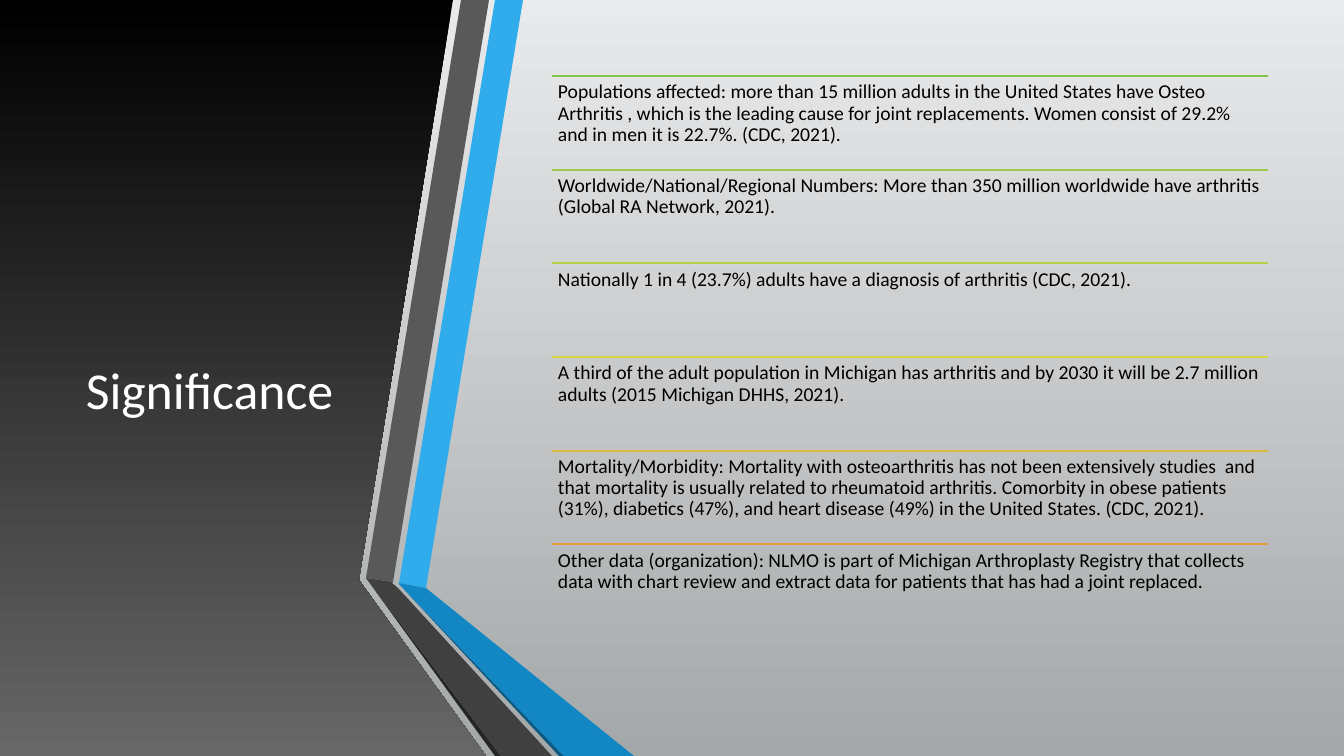
from lxml.etree import SubElement
from pptx import Presentation
from pptx.dml.color import RGBColor
from pptx.enum.shapes import MSO_CONNECTOR, MSO_SHAPE
from pptx.enum.text import MSO_ANCHOR, PP_ALIGN
from pptx.oxml.ns import qn
from pptx.util import Pt

SLIDE_WIDTH, SLIDE_HEIGHT = 1344, 756
SCALE = 12192000 / SLIDE_WIDTH  # EMU in one px

COLOURS = {
    "mist": "E9EAEB", "steel": "A5A8A9",
    "black": "000000", "ash": "676767", "white": "FFFFFF",
    "sky": "30ACEC", "ocean": "1287C3", "deep": "0C5A82",
    "grey": "595959", "charcoal": "404040", "soot": "262626",
}

# Ribbon facets as (colour, corners), relative to the ribbon's left edge
RIBBON = [
    ("sky", [(33, 583), (60, 588), (157, 0), (129, 0)]),
    ("grey", [(123, 0), (95, 0), (0, 578), (27, 582)]),
    ("soot", [(0, 578), (129, 756), (135, 756)]),
    ("deep", [(33, 584), (193, 756), (198, 756)]),
    ("ocean", [(33, 584), (198, 756), (268, 756), (60, 588), (33, 583)]),
    ("charcoal", [(186, 756), (32, 588), (26, 583), (27, 582), (0, 578), (135, 756)]),
]

# Facts as (rule colour, wording)
FACTS = [
    ("80C34F", "Populations affected: more than 15 million adults in the United States "
     "have Osteo Arthritis , which is the leading cause for joint replacements. "
     "Women consist of 29.2% and in men it is 22.7%. (CDC, 2021)."),
    ("9AC94B", "Worldwide/National/Regional Numbers: More than 350 million worldwide "
     "have arthritis (Global RA Network, 2021)."),
    ("B8D048", "Nationally 1 in 4 (23.7%) adults have a diagnosis of arthritis (CDC, 2021)."),
    ("D6D344", "A third of the adult population in Michigan has arthritis and by 2030 "
     "it will be 2.7 million adults (2015 Michigan DHHS, 2021)."),
    ("DCBA41", "Mortality/Morbidity: Mortality with osteoarthritis has not been "
     "extensively studies  and that mortality is usually related to rheumatoid "
     "arthritis. Comorbity in obese patients (31%), diabetics (47%), and heart "
     "disease (49%) in the United States. (CDC, 2021)."),
    ("E29D3E", "Other data (organization): NLMO is part of Michigan Arthroplasty Registry "
     "that collects data with chart review and extract data for patients that has "
     "had a joint replaced."),
]


def px(*lengths):
    return [round(length * SCALE) for length in lengths]


def set_all(target, values):
    for name, value in values.items():
        setattr(target, name, value)


def paint_gradient(fill, top, bottom):
    fill.gradient()
    fill.gradient_angle = 270
    for stop, colour in zip(fill.gradient_stops, (top, bottom)):
        stop.color.rgb = RGBColor.from_string(COLOURS[colour])


def add_outline(page, left, top, corners):
    """Closed shape without line or shadow; corners are relative to left, top."""
    points = [(left + x, top + y) for x, y in corners]
    builder = page.shapes.build_freeform(*points[0], scale=SCALE)
    builder.add_line_segments(points[1:], close=True)
    shape = builder.convert_to_shape()
    shape.shadow.inherit = False
    shape.line.fill.background()
    return shape


def add_text(page, box, wording, colour, size, margins, frame_format, para_format):
    frame = page.shapes.add_textbox(*px(*box)).text_frame
    sides = ("margin_left", "margin_top", "margin_right", "margin_bottom")
    set_all(frame, {"word_wrap": True, **dict(zip(sides, px(*margins))), **frame_format})
    para = frame.paragraphs[0]
    set_all(para, para_format)
    span = para.add_run()
    span.text = wording
    set_all(span.font, {"name": "Calibri", "size": Pt(size)})
    span.font.color.rgb = RGBColor.from_string(COLOURS[colour])


def add_backdrop(page, left, top, width, height):
    paint_gradient(page.background.fill, "mist", "steel")
    backdrop = page.shapes.add_shape(MSO_SHAPE.RECTANGLE, *px(left, top, width, height))
    backdrop.shadow.inherit = False
    backdrop.line.fill.background()
    paint_gradient(backdrop.fill, "mist", "steel")


def add_title_panel(page, left, top, width, height):
    corners = [(0, 0), (width - 33, 0), (width - 127, 580), (width, height), (0, height)]
    panel = add_outline(page, left, top, corners)
    paint_gradient(panel.fill, "black", "ash")
    # The deep top margin seats the title below the middle
    add_text(page, (left + 59, top + 76, 291, 562), "Significance", "white", 37,
             (15, 68, 5, 5), {"vertical_anchor": MSO_ANCHOR.MIDDLE},
             {"alignment": PP_ALIGN.CENTER})


def add_ribbon(page, left, top):
    for colour, corners in RIBBON:
        facet = add_outline(page, left, top, corners)
        facet.fill.solid()
        facet.fill.fore_color.rgb = RGBColor.from_string(COLOURS[colour])


def add_fact_list(page, left, top, width, height):
    row_height = height / len(FACTS)
    for index, (colour, wording) in enumerate(FACTS):
        row_top = top + index * row_height
        rule = page.shapes.add_connector(
            MSO_CONNECTOR.STRAIGHT, *px(left, row_top, left + width, row_top))
        rule.line.width = Pt(1.25)
        rule.line.color.rgb = RGBColor.from_string(colour)
        SubElement(rule._element.spPr, qn("a:effectLst"))
        add_text(page, (left, row_top, width, row_height), wording, "black", 14,
                 (6, 6, 6, 6), {"vertical_anchor": MSO_ANCHOR.TOP}, {"line_spacing": 0.9})


def main():
    deck = Presentation()
    deck.slide_width, deck.slide_height = px(SLIDE_WIDTH, SLIDE_HEIGHT)
    page = deck.slides.add_slide(deck.slide_layouts[6])
    add_backdrop(page, 0, 0, SLIDE_WIDTH, SLIDE_HEIGHT)
    add_title_panel(page, 0, 0, 486, SLIDE_HEIGHT)
    add_ribbon(page, 366, 0)
    add_fact_list(page, 552, 76, 716, 562)
    deck.save("out.pptx")


if __name__ == "__main__":
    main()
